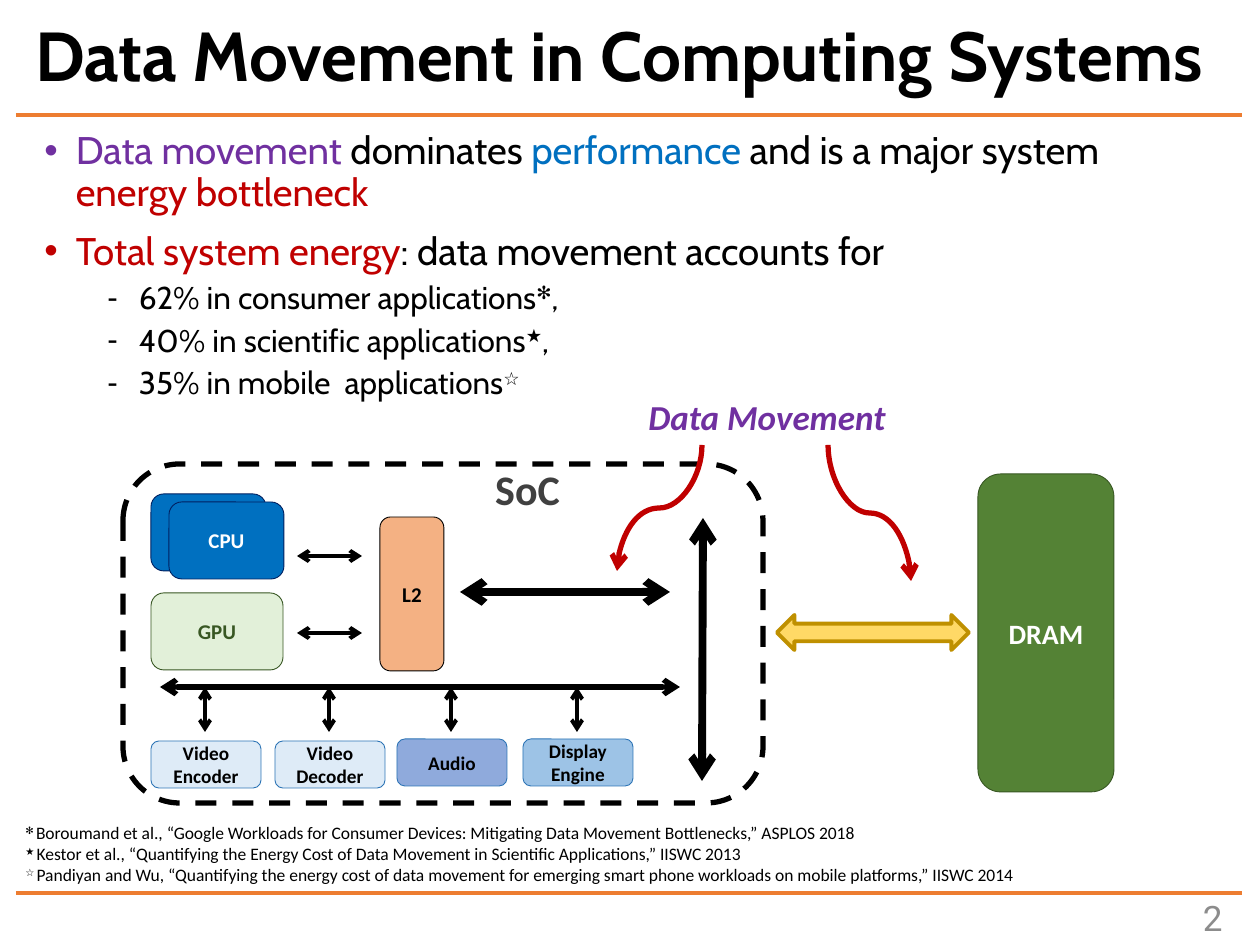
import pptx
import pptx.dml.color
import pptx.enum.dml
import pptx.enum.shapes
import pptx.enum.text
import pptx.oxml.ns
import pptx.util
from lxml import etree

SHAPE = pptx.enum.shapes.MSO_SHAPE
CONNECTOR = pptx.enum.shapes.MSO_CONNECTOR
ALIGN = pptx.enum.text.PP_ALIGN
ANCHOR = pptx.enum.text.MSO_ANCHOR
SOLID = pptx.enum.dml.MSO_LINE.SOLID
DASH = pptx.enum.dml.MSO_LINE.DASH
qn = pptx.oxml.ns.qn


class Theme:
    black, white, grey, dark = "000000", "FFFFFF", "8C8C8C", "404040"
    purple, blue, red, orange = "7030A0", "0070C0", "C00000", "ED7D31"
    navy, green, dark_green, pale_green = "002060", "548235", "385723", "E2F0D9"
    gold, dark_gold, peach = "FFD966", "BF9000", "F4B183"
    pale_blue, periwinkle, sky, steel = "DEEBF7", "8FAADC", "9DC3E6", "2E75B6"
    title = dict(name="Cabin", size=39.6, bold=True)
    point = dict(name="Cabin", size=22)
    subpoint = dict(name="Cabin", size=18)
    number = dict(name="Roboto", size=20)
    note = dict(name="Calibri", size=10)
    block = dict(name="Calibri", size=12, bold=True)
    small_block = dict(name="Calibri", size=11, bold=True)
    memory = dict(name="Calibri", size=16, bold=True)
    callout = dict(name="Calibri", size=20, bold=True, italic=True)
    chip = dict(name="Calibri", size=24, bold=True)


def px(length):
    return pptx.util.Emu(round(length * 914400 / 126))


def rgb(color):
    return pptx.dml.color.RGBColor.from_string(color)


def add_span(para, text, style, color, raised=False):
    span = para.add_run()
    span.text = text
    values = dict(style, size=pptx.util.Pt(style["size"]))
    for key, value in values.items():
        setattr(span.font, key, value)
    span.font.color.rgb = rgb(color)
    if raised:
        span.font._element.set("baseline", "30000")


def add_text(page, box, text="", style=None, color=Theme.black,
             align=ALIGN.LEFT, anchor=ANCHOR.TOP):
    frame = page.shapes.add_textbox(*map(px, box)).text_frame
    frame.word_wrap = True
    frame.vertical_anchor = anchor
    frame.paragraphs[0].alignment = align
    if text:
        add_span(frame.paragraphs[0], text, style, color)
    return frame


def add_block(page, box, fill, edge, text="", style=None, color=Theme.black,
              kind=SHAPE.ROUNDED_RECTANGLE, width=0.5, dash=SOLID):
    shape = page.shapes.add_shape(kind, *map(px, box))
    shape.shadow.inherit = False
    if fill:
        shape.fill.solid()
        shape.fill.fore_color.rgb = rgb(fill)
    else:
        shape.fill.background()
    shape.line.color.rgb = rgb(edge)
    shape.line.width = pptx.util.Pt(width)
    shape.line.dash_style = dash
    if text:
        shape.text_frame.vertical_anchor = ANCHOR.MIDDLE
        para = shape.text_frame.paragraphs[0]
        para.alignment = ALIGN.CENTER
        add_span(para, text, style, color)


def add_line(page, start, end, color, width, ends=(), kind=CONNECTOR.STRAIGHT):
    line = page.shapes.add_connector(kind, *map(px, (*start, *end)))
    line.line.color.rgb = rgb(color)
    line.line.width = pptx.util.Pt(width)
    for end_name in ends:
        etree.SubElement(line.line._get_or_add_ln(), qn(f"a:{end_name}"), type="arrow")
    etree.SubElement(line._element.spPr, qn("a:effectLst"))
    return line


def add_double_arrow(page, start, end, width=2.25):
    add_line(page, start, end, Theme.black, width, ("headEnd", "tailEnd"))


def add_falling_curve(page, start, end):
    """A curve that leaves and arrives vertically: a sideways one, turned."""
    (x1, y1), (x2, y2) = start, end
    side = 1 if x2 < x1 else -1
    middle_x, middle_y = (x1 + x2) / 2, (y1 + y2) / 2
    reach, rise = side * (y2 - y1) / 2, abs(x2 - x1) / 2
    curve = add_line(page, (middle_x - reach, middle_y - rise),
                     (middle_x + reach, middle_y + rise),
                     Theme.red, 3, ("tailEnd",), CONNECTOR.CURVE)
    turn = 90 if side > 0 else 270
    curve._element.spPr.find(qn("a:xfrm")).set("rot", str(turn * 60000))


def add_frame(page, box):
    """Title, page number and the two rules."""
    left, top, width, height = box
    for y in (115, 893):
        add_line(page, (left + 16, top + y), (left + width - 18, top + y),
                 Theme.orange, 2.25)
    title = add_text(page, (left + 23, top + 18, width - 34, 83),
                     "Data Movement in Computing Systems", Theme.title,
                     anchor=ANCHOR.MIDDLE)
    title.paragraphs[0].line_spacing = 0.9
    add_text(page, (left + width - 161, top + height - 53, 136, 50), "2",
             Theme.number, Theme.grey, ALIGN.RIGHT, ANCHOR.MIDDLE)


def add_points(page, box):
    frame = add_text(page, box)
    points = [
        (0, [("Data movement ", Theme.purple), ("dominates ", Theme.black),
             ("performance ", Theme.blue),
             ("and is a major system ", Theme.black),
             ("energy bottleneck", Theme.red)]),
        (0, [("Total system energy", Theme.red),
             (": data movement accounts for", Theme.black)]),
    ]
    for text, mark, tail in (("62% in consumer applications", "✻", ","),
                             ("40% in scientific applications", "★", ","),
                             ("35% in mobile  applications", "☆", "")):
        points.append((1, [(text, Theme.black), (mark, Theme.black, True),
                           (tail, Theme.black)]))
    levels = [(Theme.point, "•", 0.25, 10), (Theme.subpoint, "-", 0.75, 5)]
    for index, (level, spans) in enumerate(points):
        style, bullet, margin, gap = levels[level]
        para = frame.add_paragraph() if index else frame.paragraphs[0]
        para.level = level
        properties = para._p.get_or_add_pPr()
        properties.set("marL", str(pptx.util.Inches(margin)))
        properties.set("indent", str(pptx.util.Inches(-0.25)))
        etree.SubElement(properties, qn("a:buFont"), typeface="Arial")
        etree.SubElement(properties, qn("a:buChar"), char=bullet)
        para.line_spacing = 0.9
        para.space_before = pptx.util.Pt(gap if index else 0)
        for text, *look in spans:
            if text:
                add_span(para, text, style, *look)


def add_chip(page, box):
    """The SoC outline with its processors, cache, buses and media blocks."""
    left, top, width, height = box

    def at(x, y, *size):
        return (left + x, top + y, *size)

    add_block(page, box, None, Theme.black, width=3, dash=DASH)
    add_text(page, at(343, -7, 123, 63), "SoC", Theme.chip, Theme.dark, ALIGN.CENTER)
    # Processors and cache
    add_block(page, at(28, 30, 115, 77), Theme.blue, Theme.navy)
    add_block(page, at(46, 38, 115, 77), Theme.blue, Theme.navy,
              "CPU", Theme.block, Theme.white)
    add_block(page, at(28, 129, 132, 77), Theme.pale_green, Theme.dark_green,
              "GPU", Theme.block, Theme.dark_green)
    add_block(page, at(257, 53, 64, 154), Theme.peach, Theme.black, "L2", Theme.block)
    # Links and buses
    for y in (92, 169):
        add_double_arrow(page, at(239, y), at(174, y))
    add_double_arrow(page, at(547, 128), at(337, 128), 4.5)
    add_double_arrow(page, at(580, 54), at(579, 317), 4.5)
    add_double_arrow(page, at(557, 223), at(37, 223), 3)
    # Media blocks hanging from the bus
    for x, y, fill, name in ((28, 277, Theme.pale_blue, "Video Encoder"),
                             (152, 277, Theme.pale_blue, "Video Decoder"),
                             (274, 275, Theme.periwinkle, "Audio"),
                             (400, 275, Theme.sky, "Display Engine")):
        add_block(page, at(x, y, 110, 47), fill, Theme.steel, name, Theme.small_block)
        add_double_arrow(page, at(x + 54, 223), at(x + 54, 268))


def add_memory(page, box):
    """The off-chip channel and the DRAM at its right end."""
    left, top, width, height = box
    add_block(page, (left, top + 141, 192, 35), Theme.gold, Theme.dark_gold,
              kind=SHAPE.LEFT_RIGHT_ARROW, width=2.25)
    add_block(page, (left + width - 136, top, 136, height), Theme.green,
              Theme.dark_green, "DRAM", Theme.memory, Theme.white)


def add_callout(page, box):
    left, top, width, height = box
    add_text(page, (left, top, width, 55), "Data Movement", Theme.callout,
             Theme.purple, ALIGN.CENTER)
    add_falling_curve(page, (left + 124, top + 56), (left + 39, top + 182))
    add_falling_curve(page, (left + 250, top + 56), (left + 333, top + height))


def add_references(page, box):
    frame = add_text(page, box)
    references = (
        ("✻ ", "Boroumand et al., “Google Workloads for Consumer Devices: "
               "Mitigating Data Movement Bottlenecks,” ASPLOS 2018"),
        ("★ ", "Kestor et al., “Quantifying the Energy Cost of Data Movement "
               "in Scientific Applications,” IISWC 2013"),
        ("☆ ", "Pandiyan and Wu, “Quantifying the energy cost of data movement for "
               "emerging smart phone workloads on mobile platforms,” IISWC 2014"))
    for index, (mark, text) in enumerate(references):
        para = frame.add_paragraph() if index else frame.paragraphs[0]
        add_span(para, mark, Theme.note, Theme.black, True)
        add_span(para, text, Theme.note, Theme.black)


def main():
    deck = pptx.Presentation()
    deck.slide_width, deck.slide_height = px(1260), px(945)
    page = deck.slides.add_slide(deck.slide_layouts[6])
    add_frame(page, (0, 0, 1260, 945))
    add_points(page, (32, 125, 1187, 284))
    add_chip(page, (123, 464, 640, 339))
    add_memory(page, (777, 474, 337, 318))
    add_callout(page, (578, 389, 378, 192))
    add_references(page, (13, 816, 1032, 77))
    deck.save("out.pptx")


if __name__ == "__main__":
    main()
